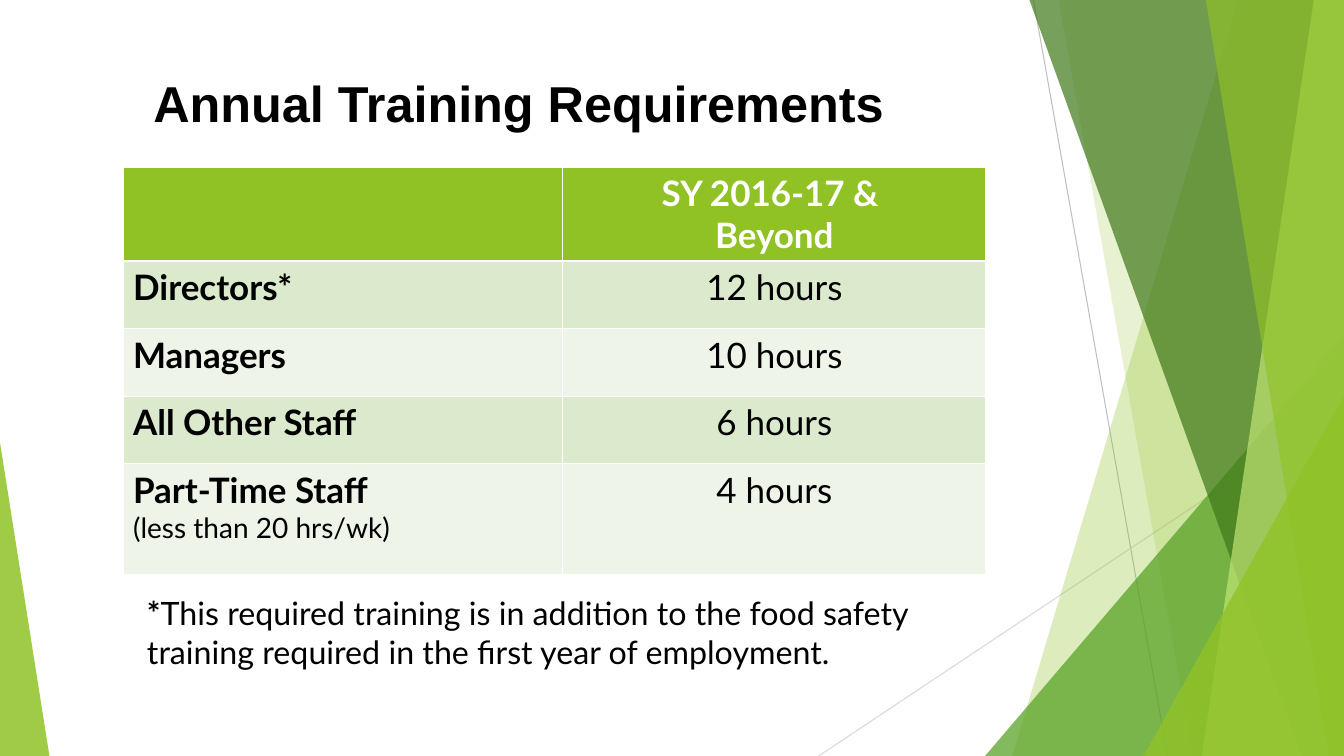
"""Build the annual training requirements slide."""
from dataclasses import dataclass

from lxml import etree
from pptx import Presentation
from pptx import util as u
from pptx.dml import color
from pptx.enum import shapes, text
from pptx.oxml import ns


@dataclass(frozen=True)
class Theme:
    green: str = "90C226"
    leaf: str = "54A021"
    forest: str = "3F7819"
    lime: str = "C0E474"
    band_dark: str = "DBE9CD"
    band_light: str = "EEF4E8"
    black: str = "000000"
    white: str = "FFFFFF"
    line: str = "BFBFBF"
    pale_line: str = "D9D9D9"
    title_font: str = "Arial"
    body_font: str = "Lato"
    title_size: int = 36
    table_size: int = 25
    detail_size: int = 20
    footnote_size: int = 23


theme = Theme()


def style_font(run, name, size, colour, bold):
    """Format one run of text."""
    run.font.name = name
    run.font.size = u.Pt(size)
    run.font.bold = bold
    run.font.color.rgb = color.RGBColor.from_string(colour)


def add_solid_fill(parent, colour, alpha=100):
    """Append a solid fill with the given opacity in percent."""
    fill = etree.SubElement(parent, ns.qn("a:solidFill"))
    rgb = etree.SubElement(fill, ns.qn("a:srgbClr"), val=colour)
    etree.SubElement(rgb, ns.qn("a:alpha"), val=str(alpha * 1000))


presentation = Presentation()
presentation.slide_width = u.Inches(13.33)
presentation.slide_height = u.Inches(7.5)
slide = presentation.slides.add_slide(presentation.slide_layouts[5])

thin_lines = [
    (10.25, 0, 11.58, 7.5, theme.line),
    (13.33, 4.03, 8.12, 7.5, theme.pale_line),
]
for x1, y1, x2, y2, colour in thin_lines:
    connector = slide.shapes.add_connector(
        shapes.MSO_CONNECTOR.STRAIGHT,
        u.Inches(x1), u.Inches(y1), u.Inches(x2), u.Inches(y2))
    connector.line.color.rgb = color.RGBColor.from_string(colour)
    connector.line.width = u.Pt(0.75)
    etree.SubElement(connector._element.spPr, ns.qn("a:effectLst"))

facets = [
    ("blade", (12.28, 10.04), theme.green, 30),
    ("blade", (10.5, 11.83), theme.green, 20),
    ("triangle", (9.77, 3.33, 3.56, 4.17, 1), theme.leaf, 72),
    ("blade", (10.21, 12.91), theme.forest, 70),
    ("blade", (13.03, 11.92), theme.lime, 70),
    ("blade", (11.96, 13.18), theme.green, 65),
    ("triangle", (11.34, 3.93, 1.99, 3.57, 1), theme.green, 80),
    ("triangle", (0, 4.39, 0.49, 3.11, 0), theme.green, 85),
]
for kind, geometry, colour, alpha in facets:
    if kind == "blade":
        top_x, bottom_x = geometry
        builder = slide.shapes.build_freeform(
            u.Inches(top_x), 0, scale=1.0)
        corners = [(13.33, 0), (13.33, 7.5), (bottom_x, 7.5)]
        builder.add_line_segments(
            [(u.Inches(x), u.Inches(y)) for x, y in corners], close=True)
        facet = builder.convert_to_shape()
    else:
        *box, apex = geometry
        facet = slide.shapes.add_shape(
            shapes.MSO_SHAPE.ISOSCELES_TRIANGLE, *map(u.Inches, box))
        facet.adjustments[0] = apex
    facet.shadow.inherit = False
    facet.line.fill.background()
    facet.fill.solid()
    facet.fill.fore_color.rgb = color.RGBColor.from_string(colour)
    rgb = facet._element.spPr.find(ns.qn("a:solidFill"))[0]
    etree.SubElement(rgb, ns.qn("a:alpha"), val=str(alpha * 1000))

title = slide.shapes.title
title.left, title.top = u.Inches(1.42), u.Inches(0.67)
title.width, title.height = u.Inches(8.73), u.Inches(1.44)
title.text_frame.text = "Annual Training Requirements"
title.text_frame.vertical_anchor = text.MSO_ANCHOR.TOP
title_paragraph = title.text_frame.paragraphs[0]
title_paragraph.alignment = text.PP_ALIGN.LEFT
style_font(title_paragraph.runs[0], theme.title_font, theme.title_size,
           theme.black, True)

rows = [
    ("", "SY 2016-17 & \nBeyond"),
    ("Directors*", "12 hours"),
    ("Managers", "10 hours"),
    ("All Other Staff", "6 hours"),
    ("Part-Time Staff\n(less than 20 hrs/wk)", "4 hours"),
]
column_widths = [4.36, 4.2]
row_heights = [0.93, 0.67, 0.67, 0.67, 1.1]
table = slide.shapes.add_table(
    len(rows), len(column_widths), u.Inches(1.22), u.Inches(1.66),
    u.Inches(sum(column_widths)), u.Inches(sum(row_heights))).table
for column, width in zip(table.columns, column_widths):
    column.width = u.Inches(width)
for row, height in zip(table.rows, row_heights):
    row.height = u.Inches(height)

for row_index, row_texts in enumerate(rows):
    is_header = row_index == 0
    band = theme.band_dark if row_index % 2 else theme.band_light
    for column_index, cell_text in enumerate(row_texts):
        cell = table.cell(row_index, column_index)
        cell.text_frame.text = cell_text
        for line_index, paragraph in enumerate(cell.text_frame.paragraphs):
            if column_index == 1:
                paragraph.alignment = text.PP_ALIGN.CENTER
            is_detail = column_index == 0 and line_index == 1
            for run in paragraph.runs:
                style_font(
                    run, theme.body_font,
                    theme.detail_size if is_detail else theme.table_size,
                    theme.white if is_header else theme.black,
                    is_header or (column_index == 0 and not is_detail))
        properties = cell._tc.get_or_add_tcPr()
        for side in ("a:lnL", "a:lnR", "a:lnT", "a:lnB"):
            border = etree.SubElement(
                properties, ns.qn(side), w=str(u.Pt(1)))
            add_solid_fill(border, theme.white)
        add_solid_fill(properties, theme.green if is_header else band)

footnote = slide.shapes.add_textbox(
    u.Inches(1.36), u.Inches(5.84), u.Inches(8.74), u.Inches(0.88))
footnote.text_frame.word_wrap = True
footnote_paragraph = footnote.text_frame.paragraphs[0]
footnote_parts = [
    ("*", True),
    ("This required training is in addition to the food safety "
     "training required in the first year of employment.", False),
]
for part, bold in footnote_parts:
    run = footnote_paragraph.add_run()
    run.text = part
    style_font(run, theme.body_font, theme.footnote_size, theme.black, bold)

presentation.save("out.pptx")
